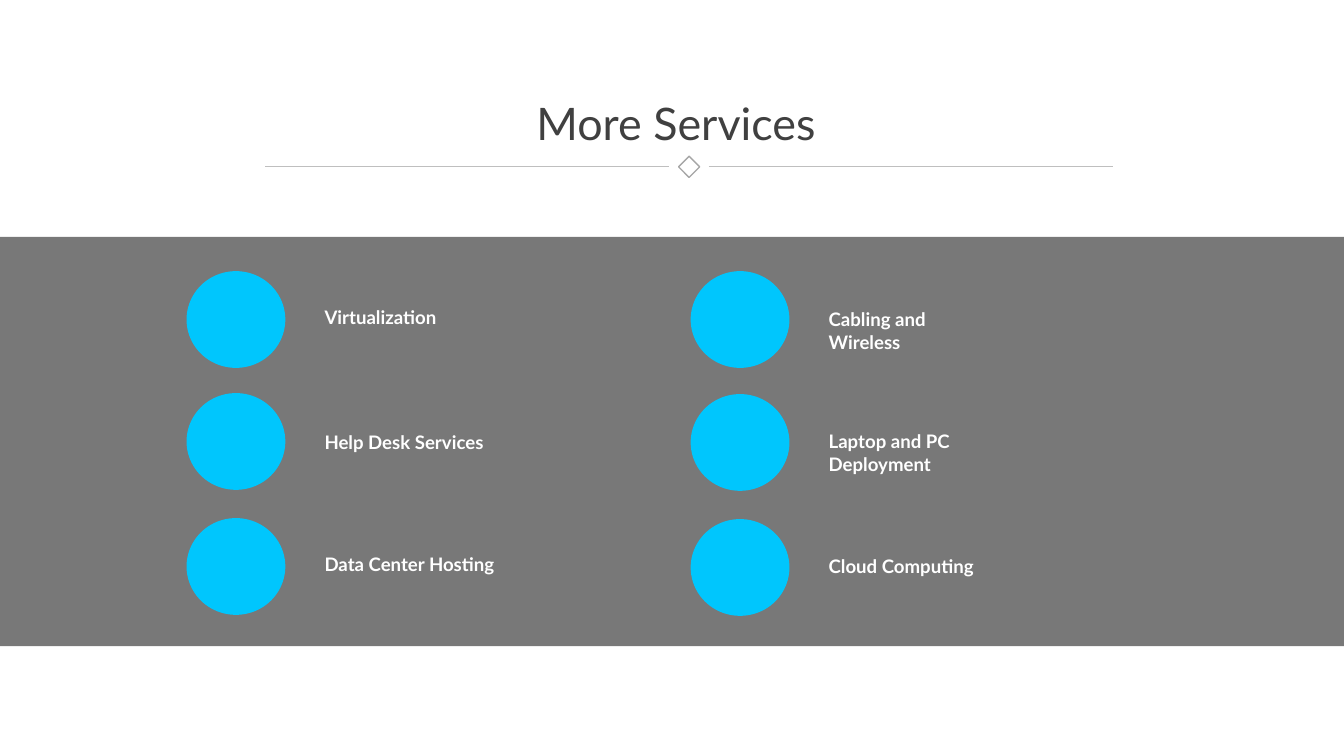
from lxml import etree
from pptx import Presentation
from pptx.dml.color import RGBColor
from pptx.enum import shapes, text
from pptx.oxml import ns
from pptx.util import Inches, Pt


def paint(color, value):
    color.rgb = RGBColor.from_string(value)


def write(box, words, size=13.3, color="FFFFFF", bold=False, align=text.PP_ALIGN.LEFT):
    frame = box.text_frame
    frame.word_wrap = True
    frame.auto_size = text.MSO_AUTO_SIZE.NONE
    frame.vertical_anchor = text.MSO_ANCHOR.TOP
    frame.text = words
    line = frame.paragraphs[0]
    line.alignment = align
    font = line.runs[0].font
    font.name, font.size, font.bold = "Lato", Pt(size), bold
    paint(font.color, color)


deck = Presentation()
deck.slide_width, deck.slide_height = Inches(13.33), Inches(7.5)
slide = deck.slides.add_slide(deck.slide_layouts[5])
kinds = shapes.MSO_SHAPE

band = slide.shapes.add_shape(kinds.RECTANGLE, 0, Inches(2.35), deck.slide_width, Inches(4.06))
band.shadow.inherit = False
band.fill.solid()
paint(band.fill.fore_color, "404040")
band.line.fill.background()
tint = band.fill._xPr.find(".//" + ns.qn("a:srgbClr"))
etree.SubElement(tint, ns.qn("a:alpha")).set("val", "70000")

columns = [
    (1.85, [("Virtualization", 2.69, 2.99),
            ("Help Desk Services", 3.9, 4.23),
            ("Data Center Hosting", 5.14, 5.44)]),
    (6.85, [("Cabling and Wireless", 2.69, 3.01),
            ("Laptop and PC Deployment", 3.91, 4.22),
            ("Cloud Computing", 5.15, 5.46)]),
]
for left, items in columns:
    for name, top, base in items:
        disc = slide.shapes.add_shape(
            kinds.OVAL, Inches(left), Inches(top), Inches(0.98), Inches(0.96))
        disc.shadow.inherit = False
        disc.fill.solid()
        paint(disc.fill.fore_color, "00C6FD")
        disc.line.fill.background()
        label = slide.shapes.add_textbox(
            Inches(left + 1.27), Inches(base), Inches(1.91), Inches(0.55))
        write(label, name, bold=True)

title = slide.shapes.title
title.left, title.top = Inches(5.09), Inches(0.9)
title.width, title.height = Inches(3.23), Inches(0.64)
write(title, "More Services", size=32, color="404040", align=text.PP_ALIGN.CENTER)

for left in (2.63, 7.03):
    rule = slide.shapes.add_connector(
        shapes.MSO_CONNECTOR.STRAIGHT,
        Inches(left), Inches(1.65), Inches(left + 4.01), Inches(1.65))
    paint(rule.line.color, "BFBFBF")
    rule.line.width = Pt(0.5)
    etree.SubElement(rule._element.spPr, ns.qn("a:effectLst"))

gem = slide.shapes.add_shape(
    kinds.DIAMOND, Inches(6.73), Inches(1.55), Inches(0.21), Inches(0.21))
gem.shadow.inherit = False
gem.fill.background()
paint(gem.line.color, "A6A6A6")
gem.line.width = Pt(1)

deck.save("out.pptx")
